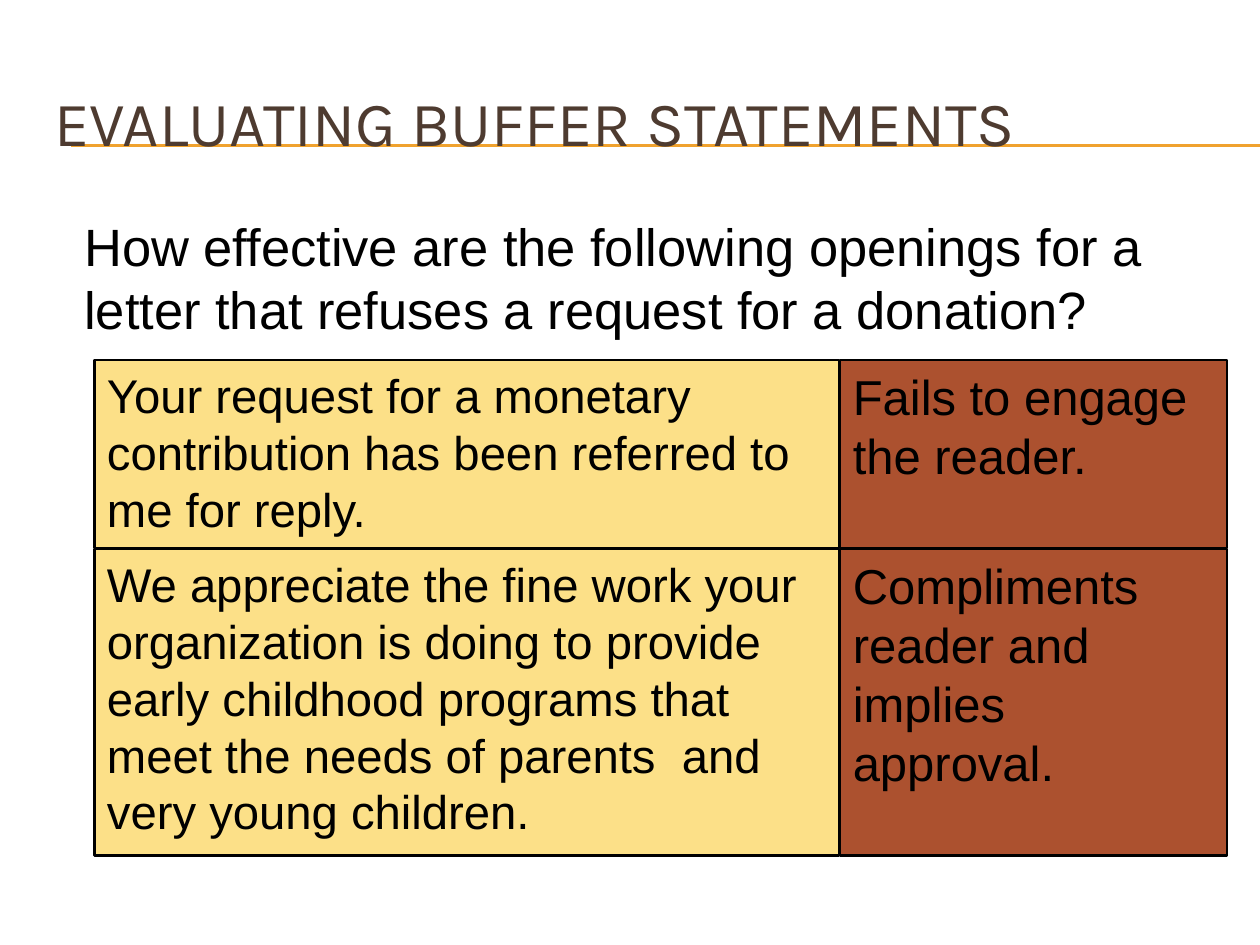
from dataclasses import dataclass

from lxml import etree
from pptx import Presentation
from pptx.dml.color import RGBColor
from pptx.enum import shapes, text
from pptx.oxml import ns
from pptx.util import Inches, Pt


@dataclass(frozen=True)
class Theme:
    heading_font: str = "Karla"
    body_font: str = "Arial"
    heading: str = "4E3B30"
    ink: str = "000000"
    rule: str = "F0A22E"
    statement_fill: str = "FCE088"
    verdict_fill: str = "AC512F"
    heading_size: float = 36
    question_size: float = 30
    statement_size: float = 27
    verdict_size: float = 28
    rule_width: float = 0.75
    border_width: float = 1.25


class SlideBuilder:
    def __init__(self, slide, theme):
        self.slide = slide
        self.theme = theme

    def set_text(self, owner, wording, size, font=None, color=None, **frame_format):
        frame = owner.text_frame
        frame_values = {
            "word_wrap": True,
            "auto_size": text.MSO_AUTO_SIZE.NONE,
            "vertical_anchor": text.MSO_ANCHOR.TOP,
            **frame_format,
        }
        for name, value in frame_values.items():
            setattr(frame, name, value)
        paragraph = frame.paragraphs[0]
        paragraph.alignment = text.PP_ALIGN.LEFT
        run = paragraph.add_run()
        run.text = wording
        font_values = {"name": font or self.theme.body_font, "size": Pt(size)}
        for name, value in font_values.items():
            setattr(run.font, name, value)
        run.font.color.rgb = RGBColor.from_string(color or self.theme.ink)

    def rule(self, left, right, y):
        line = self.slide.shapes.add_connector(
            shapes.MSO_CONNECTOR.STRAIGHT,
            Inches(left), Inches(y), Inches(right), Inches(y))
        line.line.color.rgb = RGBColor.from_string(self.theme.rule)
        line.line.width = Pt(self.theme.rule_width)
        etree.SubElement(line._element.spPr, ns.qn("a:effectLst"))

    def title(self, wording, left, top, width, height):
        heading = self.slide.shapes.title
        box = {"left": left, "top": top, "width": width, "height": height}
        for name, value in box.items():
            setattr(heading, name, Inches(value))
        self.set_text(heading, wording, self.theme.heading_size,
                      self.theme.heading_font, self.theme.heading,
                      vertical_anchor=text.MSO_ANCHOR.MIDDLE)
        # The heading sits in front of the rules it overlaps.
        self.slide.shapes._spTree.append(heading._element)

    def question(self, wording, *box):
        label = self.slide.shapes.add_textbox(*map(Inches, box))
        self.set_text(label, wording, self.theme.question_size,
                      auto_size=text.MSO_AUTO_SIZE.SHAPE_TO_FIT_TEXT)

    def panel(self, wording, fill, size, *box):
        panel = self.slide.shapes.add_shape(
            shapes.MSO_SHAPE.RECTANGLE, *map(Inches, box))
        panel.shadow.inherit = False
        panel.fill.solid()
        panel.fill.fore_color.rgb = RGBColor.from_string(fill)
        panel.line.color.rgb = RGBColor.from_string(self.theme.ink)
        panel.line.width = Pt(self.theme.border_width)
        self.set_text(panel, wording, size)


def main():
    deck = Presentation()
    deck.slide_width, deck.slide_height = Inches(10), Inches(7.5)
    theme = Theme()
    title_only = deck.slide_layouts[5]
    builder = SlideBuilder(deck.slides.add_slide(title_only), theme)

    for y in (1.15, 1.16):
        builder.rule(0.56, 10, y)
    builder.question(
        "How effective are the following openings for a letter "
        "that refuses a request for a donation?",
        0.57, 1.65, 9.36, 1.11)

    evaluations = [
        ("Your request for a monetary contribution has been referred "
         "to me for reply.",
         "Fails to engage the reader.", 1.49),
        ("We appreciate the fine work your organization is doing to provide "
         "early childhood programs that meet the needs of parents  and "
         "very young children.",
         "Compliments reader and implies approval.", 2.43),
    ]
    columns = [
        (0.75, 5.91, theme.statement_fill, theme.statement_size),
        (6.67, 3.07, theme.verdict_fill, theme.verdict_size),
    ]
    top, gap = 2.86, 0.01
    for *wordings, height in evaluations:
        for wording, (left, width, fill, size) in zip(wordings, columns):
            builder.panel(wording, fill, size, left, top, width, height)
        top += height + gap

    builder.title("EVALUATING BUFFER STATEMENTS", 0.33, 0.5, 9.5, 0.92)
    deck.save("out.pptx")


if __name__ == "__main__":
    main()
